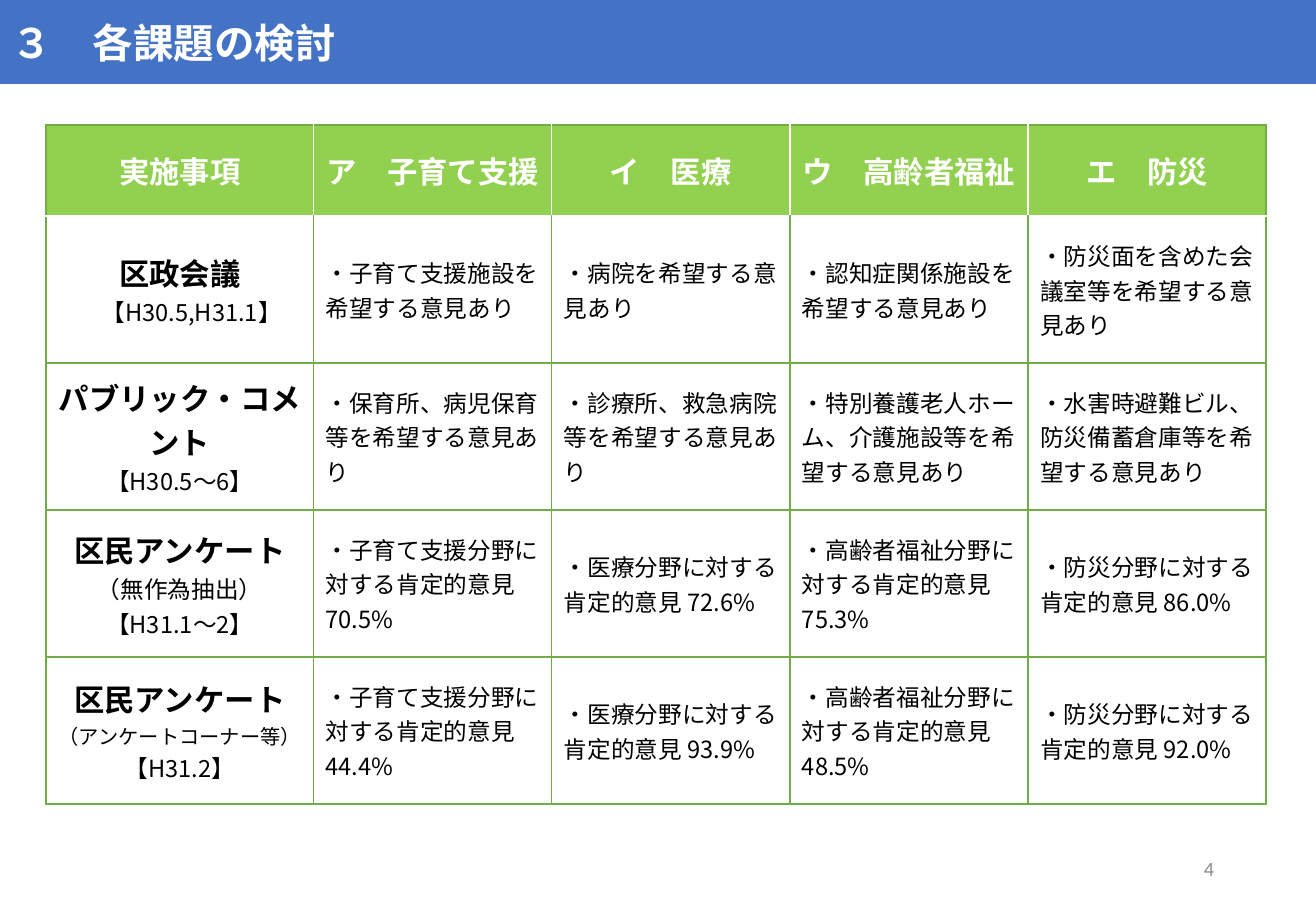
from lxml import etree
from pptx import Presentation
from pptx.dml.color import RGBColor
from pptx.enum.shapes import MSO_SHAPE
from pptx.enum.text import MSO_ANCHOR, PP_ALIGN
from pptx.oxml.ns import qn
from pptx.util import Pt

PX = 9144
RECTANGLE = MSO_SHAPE.RECTANGLE
MIDDLE = MSO_ANCHOR.MIDDLE
LEFT, CENTER, RIGHT = PP_ALIGN.LEFT, PP_ALIGN.CENTER, PP_ALIGN.RIGHT
JAPANESE, LATIN = "Noto Sans CJK JP", "Calibri"
BLUE, LIME, GREEN = "4472C4", "92D050", "70AD47"
WHITE, BLACK, GRAY = "FFFFFF", "000000", "8C8C8C"
COLUMN_WIDTHS = [220] + [196] * 4
ROW_HEIGHTS = [75] + [121] * 4

HEADINGS = ["実施事項", "ア　子育て支援", "イ　医療", "ウ　高齢者福祉", "エ　防災"]
ACTIVITIES = [
    [("区政会議", 18), ("　【H30.5,H31.1】", 14)],
    [("パブリック・コメント", 18), ("【H30.5～6】", 14)],
    [("区民アンケート", 18), ("（無作為抽出）", 14), ("【H31.1～2】", 14)],
    [("区民アンケート", 18), ("（アンケートコーナー等）", 12), ("【H31.2】", 14)],
]
REQUESTS = [
    ["子育て支援施設を", "病院を", "認知症関係施設を", "防災面を含めた会議室等を"],
    ["保育所、病児保育等を", "診療所、救急病院等を",
     "特別養護老人ホーム、介護施設等を", "水害時避難ビル、防災備蓄倉庫等を"],
]
FIELDS = ["子育て支援", "医療", "高齢者福祉", "防災"]
APPROVALS = [["70.5%", "72.6%", "75.3%", "86.0%"],
             ["44.4%", "93.9%", "48.5%", "92.0%"]]


def px(length):
    """Turn a length in px into EMU."""
    return length * PX


def color(value):
    """Turn a hex string into a colour."""
    return RGBColor.from_string(value)


def write(frame, text, size=14, fill=BLACK, bold=False, align=LEFT,
          font=JAPANESE, first=True):
    """Write one formatted paragraph into a text frame."""
    para = frame.paragraphs[0] if first else frame.add_paragraph()
    para.alignment = align
    span = para.add_run()
    span.text = text
    span.font.size = Pt(size)
    span.font.bold = bold
    span.font.name = font
    span.font.color.rgb = color(fill)
    east_asian = etree.SubElement(span.font._element, qn("a:ea"))
    east_asian.set("typeface", font)


def add_title_bar(page, text):
    """Add the blue bar with the slide title."""
    bar = page.shapes.add_shape(RECTANGLE, 0, 0, px(1083), px(69))
    bar.shadow.inherit = False
    bar.fill.solid()
    bar.fill.fore_color.rgb = color(BLUE)
    bar.line.fill.background()
    bar.text_frame.vertical_anchor = MIDDLE
    bar.text_frame.word_wrap = True
    write(bar.text_frame, text, size=24, fill=WHITE, bold=True)


def add_page_number(page, text):
    """Add the page number at the lower right."""
    box = page.shapes.add_textbox(px(765), px(695), px(244), px(40))
    box.text_frame.word_wrap = True
    box.text_frame.vertical_anchor = MIDDLE
    write(box.text_frame, text, size=12, fill=GRAY, align=RIGHT, font=LATIN)


def set_borders(cell, **sides):
    """Draw the borders of a cell, given as hex colours by side."""
    properties = cell._tc.get_or_add_tcPr()
    for index, (side, value) in enumerate(sides.items()):
        line = etree.Element(qn(f"a:ln{side}"), w=str(Pt(1)))
        solid = etree.SubElement(line, qn("a:solidFill"))
        etree.SubElement(solid, qn("a:srgbClr"), val=value)
        properties.insert(index, line)


def style_cell(cell, row, column):
    """Set the fill, anchor and borders that a cell's place calls for."""
    header = row == 0
    cell.vertical_anchor = MIDDLE
    cell.fill.solid()
    cell.fill.fore_color.rgb = color(LIME if header else WHITE)
    last = len(HEADINGS) - 1
    set_borders(
        cell,
        L=WHITE if header and column > 0 else GREEN,
        R=WHITE if header and column < last else GREEN,
        T=WHITE if row == 1 else GREEN,
        B=WHITE if header else GREEN,
    )


def opinion_rows():
    """Return the opinions of the four activities, one list a row."""
    requests = [[f"・{wish}希望する意見あり" for wish in row] for row in REQUESTS]
    surveys = [[f"・{field}分野に対する肯定的意見 {share}"
                for field, share in zip(FIELDS, row)] for row in APPROVALS]
    return requests + surveys


def add_review_table(page):
    """Add the table of activities and opinions by field."""
    table = page.shapes.add_table(
        len(ROW_HEIGHTS), len(COLUMN_WIDTHS), px(38), px(103),
        px(sum(COLUMN_WIDTHS)), px(sum(ROW_HEIGHTS))).table
    table.horz_banding = False
    for column, width in zip(table.columns, COLUMN_WIDTHS):
        column.width = px(width)
    for row, height in zip(table.rows, ROW_HEIGHTS):
        row.height = px(height)
    for row in range(len(ROW_HEIGHTS)):
        for column in range(len(COLUMN_WIDTHS)):
            style_cell(table.cell(row, column), row, column)
    for column, heading in enumerate(HEADINGS):
        write(table.cell(0, column).text_frame, heading, size=18, fill=WHITE,
              bold=True, align=CENTER)
    for row, (activity, opinions) in enumerate(zip(ACTIVITIES, opinion_rows()), 1):
        for index, (text, size) in enumerate(activity):
            write(table.cell(row, 0).text_frame, text, size=size,
                  bold=index == 0, align=CENTER, first=index == 0)
        for column, opinion in enumerate(opinions, 1):
            write(table.cell(row, column).text_frame, opinion)


def main():
    """Build the slide and save the deck."""
    deck = Presentation()
    deck.slide_width, deck.slide_height = px(1083), px(750)
    page = deck.slides.add_slide(deck.slide_layouts[6])
    add_page_number(page, "4")
    add_title_bar(page, "３　各課題の検討")
    add_review_table(page)
    deck.save("out.pptx")


if __name__ == "__main__":
    main()
